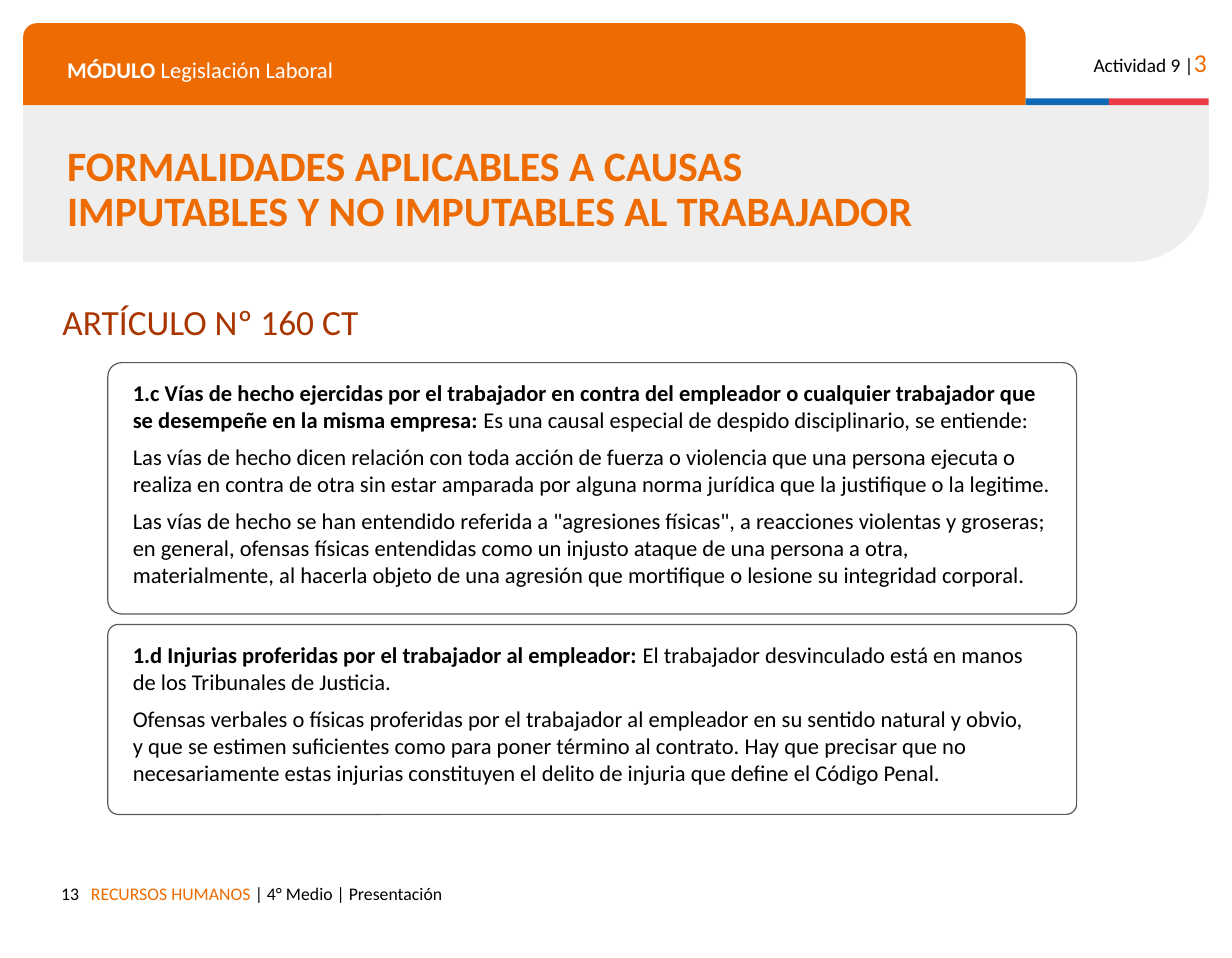
import pptx
import pptx.util
import pptx.dml.color
import pptx.enum.shapes
import pptx.enum.text
from dataclasses import dataclass

Pt = pptx.util.Pt
Form = pptx.enum.shapes.MSO_SHAPE
Align = pptx.enum.text.PP_ALIGN
Anchor = pptx.enum.text.MSO_ANCHOR


@dataclass(frozen=True)
class Theme:
    """Colours, font and type sizes of the deck."""
    font: str = "Calibri"
    orange: str = "ED6B00"
    rust: str = "A93501"
    blue: str = "0F69B4"
    red: str = "EB3C46"
    pale: str = "EEEEEE"
    edge: str = "595959"
    black: str = "000000"
    white: str = "FFFFFF"
    title: int = 26
    head: int = 22
    page: int = 16
    body: int = 14
    label: int = 12
    foot: int = 11


theme = Theme()


def tint(code):
    """Turn a hex code into a colour."""
    return pptx.dml.color.RGBColor.from_string(code)


def draw(slide, form, box, fill=None, line=None):
    """Add a flat preset shape."""
    shape = slide.shapes.add_shape(form, *map(Pt, box))
    shape.shadow.inherit = False
    if fill:
        shape.fill.solid()
        shape.fill.fore_color.rgb = tint(fill)
    else:
        shape.fill.background()
    if line:
        shape.line.color.rgb = tint(line)
        shape.line.width = Pt(0.75)
    else:
        shape.line.fill.background()
    return shape


def pad(frame, left, top, right, base):
    """Wrap the text and set its four insets."""
    frame.word_wrap = True
    frame.margin_left, frame.margin_top = Pt(left), Pt(top)
    frame.margin_right, frame.margin_bottom = Pt(right), Pt(base)


def write(para, runs, align=Align.LEFT):
    """Add runs of text, size, colour and weight."""
    para.alignment = align
    for text, size, color, bold in runs:
        run = para.add_run()
        run.text = text
        run.font.name = theme.font
        run.font.size = Pt(size)
        run.font.bold = bold
        run.font.color.rgb = tint(color)


def label(slide, box, runs, align=Align.LEFT):
    """Add a text box of one paragraph."""
    frame = slide.shapes.add_textbox(*map(Pt, box)).text_frame
    pad(frame, 7.2, 7.2, 7.2, 7.2)
    write(frame.paragraphs[0], runs, align)
    return frame


def header(slide, box):
    """Draw the module bar, the flag strip and the activity label."""
    x, y, w, h = box
    bar, blue, strip = 622.8, 51.8, 4.3
    low = y + h - strip
    draw(slide, Form.ROUND_2_SAME_RECTANGLE, (x, y, bar, h), theme.orange)
    draw(slide, Form.RECTANGLE, (x + bar, low, blue, strip), theme.blue)
    draw(slide, Form.RECTANGLE,
         (x + bar + blue, low, w - bar - blue, strip), theme.red)
    label(slide, (x + 20.2, y + 13, bar - 36, 25.2),
          [("MÓDULO ", theme.body, theme.white, True),
           ("Legislación Laboral", theme.body, theme.white, False)])
    label(slide, (x + w - 86.4, y + 7.2, 92.2, 27.4),
          [("Actividad 9 |", theme.label, theme.black, False),
           ("3", theme.page, theme.orange, False)], Align.RIGHT)


def banner(slide, box, text):
    """Draw the title on a panel with one round lower corner."""
    x, y, w, h = box
    panel = draw(slide, Form.ROUND_1_RECTANGLE,
                 (x + (w - h) / 2, y + (h - w) / 2, h, w), theme.pale)
    panel.adjustments[0] = 0.5
    panel.rotation = 90
    frame = label(slide, (x + 20.2, y + 17, 551.5, 72),
                  [(text, theme.title, theme.orange, True)])
    frame.vertical_anchor = Anchor.MIDDLE
    frame.paragraphs[0].line_spacing = 0.9


def card(slide, box, right, lead, intro, notes):
    """Draw a round card with a bold lead and its notes."""
    shape = draw(slide, Form.ROUNDED_RECTANGLE, box, line=theme.edge)
    shape.adjustments[0] = 0.055
    curve = 0.016 * box[3]
    frame = shape.text_frame
    frame.vertical_anchor = Anchor.TOP
    pad(frame, 15.5 - curve, 10.4 - curve, right - curve, 3.6)
    write(frame.paragraphs[0],
          [(lead, theme.body, theme.black, True),
           (intro, theme.body, theme.black, False)])
    for note in notes:
        para = frame.add_paragraph()
        para.space_before = Pt(6)
        write(para, [(note, theme.body, theme.black, False)])


def content(slide, box):
    """Place the article heading and its two cards."""
    x, y, w, h = box
    frame = label(slide, (x, y, 329.8, 33.8),
                  [("ARTÍCULO Nº 160 CT", theme.head, theme.rust, False)])
    pad(frame, 7.2, 3.6, 7.2, 3.6)
    left, top, gap, tall = x + 35.3, y + 42.5, 6.5, 156.2
    wide = w - 35.3
    card(slide, (left, top, wide, tall), 13,
         "1.c Vías de hecho ejercidas por el trabajador en contra del "
         "empleador o cualquier trabajador que se desempeñe en la misma "
         "empresa: ",
         "Es una causal especial de despido disciplinario, se entiende:",
         ["Las vías de hecho dicen relación con toda acción de fuerza o "
          "violencia que una persona ejecuta o realiza en contra de otra sin "
          "estar amparada por alguna norma jurídica que la justifique o la "
          "legitime.",
          "Las vías de hecho se han entendido referida a \"agresiones "
          "físicas\", a reacciones violentas y groseras; en general, ofensas "
          "físicas entendidas como un injusto ataque de una persona a otra, "
          "materialmente, al hacerla objeto de una agresión que mortifique o "
          "lesione su integridad corporal."])
    low = top + tall + gap
    card(slide, (left, low, wide, y + h - low), 24,
         "1.d Injurias proferidas por el trabajador al empleador: ",
         "El trabajador desvinculado está en manos de los Tribunales de "
         "Justicia.",
         ["Ofensas verbales o físicas proferidas por el trabajador al "
          "empleador en su sentido natural y obvio, y que se estimen "
          "suficientes como para poner término al contrato. Hay que precisar "
          "que no necesariamente estas injurias constituyen el delito de "
          "injuria que define el Código Penal."])


def footer(slide, box):
    """Place the page number and the course line."""
    x, y, w, h = box
    num = 41.8
    label(slide, (x, y, num, h),
          [("13", theme.foot, theme.black, False)], Align.RIGHT)
    label(slide, (x + num - 6.8, y, w - num, h),
          [("RECURSOS HUMANOS ", theme.foot, theme.orange, False),
           ("| 4° Medio | Presentación", theme.foot, theme.black, False)])


def main():
    """Build and save the slide."""
    deck = pptx.Presentation()
    deck.slide_width, deck.slide_height = Pt(765.4), Pt(595.4)
    slide = deck.slides.add_slide(deck.slide_layouts[6])
    header(slide, (14.4, 14.4, 736.6, 51.1))
    banner(slide, (14.4, 65.5, 736.6, 97.2),
           "FORMALIDADES APLICABLES A CAUSAS IMPUTABLES Y NO IMPUTABLES "
           "AL TRABAJADOR")
    content(slide, (31.7, 182.9, 637.2, 323.3))
    footer(slide, (14.4, 542.2, 549.4, 27.4))
    deck.save("out.pptx")


if __name__ == "__main__":
    main()
